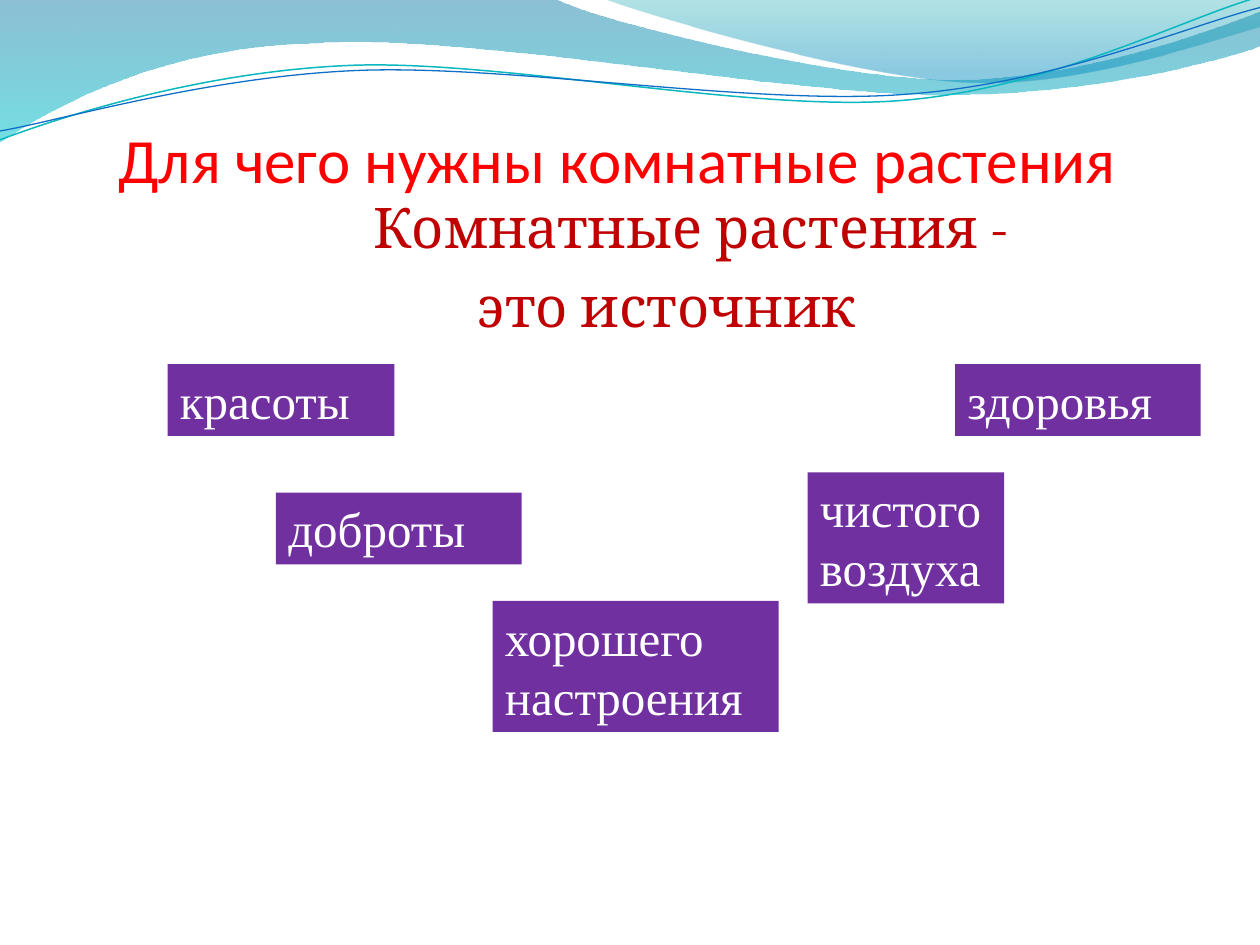
from lxml import etree
from pptx import Presentation
from pptx import util as u
from pptx.dml.color import RGBColor
from pptx.enum import shapes, text
from pptx.oxml.ns import qn

RED = RGBColor(0xFF, 0x00, 0x00)
DARK_RED = RGBColor(0xC0, 0x00, 0x00)
PURPLE = RGBColor(0x70, 0x30, 0xA0)
WHITE = RGBColor(0xFF, 0xFF, 0xFF)
DEEP_BLUE = RGBColor(0x00, 0x74, 0xA1)
CYAN = RGBColor(0x00, 0xC6, 0xCF)
TEAL = RGBColor(0x00, 0xA1, 0xA9)
SKY = RGBColor(0x00, 0x8B, 0xBF)
LINE_TEAL = RGBColor(0x0A, 0xB8, 0xBF)
LINE_BLUE = RGBColor(0x0F, 0x6F, 0xC6)

WIDTH, HEIGHT = 10, 7.5
UNITS_PER_INCH = 100

TITLE = "Для чего нужны комнатные растения"
# text, first-line indent in inches
INTRO = [("Комнатные растения -", 0.08), ("это источник", -0.3)]
# text, left, top, width, number of lines
SOURCES = [
    ("красоты", 1.33, 2.89, 1.8, 1),
    ("хорошего настроения", 3.91, 4.77, 2.27, 2),
    ("доброты", 2.19, 3.91, 1.95, 1),
    ("чистого воздуха", 6.41, 3.75, 1.56, 2),
    ("здоровья", 7.58, 2.89, 1.95, 1),
]

# A step of two numbers is a straight line, one of six is a Bezier curve.
# Gradient stops: position, colour, opacity in percent.
BANDS = [
    ([(0, 0), (4.4, -0.01), (4.76, 0.17, 6.64, 0.63, 7.58, 0.63),
      (8.53, 0.63, 9.58, 0.26, 10, 0.09), (10.01, 0.36),
      (9.83, 0.44, 8.7, 0.76, 7.46, 0.75), (6.22, 0.75, 3.82, 0.28, 2.57, 0.34),
      (1.29, 0.36, 0.46, 0.83, -0.01, 1.13)],
     [(0, DEEP_BLUE, 45), (1, CYAN, 55)]),
    ([(4.79, -0.01), (5.09, 0.11, 6.82, 0.62, 7.69, 0.65),
      (8.56, 0.69, 9.61, 0.32, 10, 0.21), (10, 0)],
     [(0, TEAL, 30), (0.8, SKY, 45)]),
]
WAVES = [
    ([(0, 1.11), (0.48, 0.93, 1.58, 0.57, 2.77, 0.52),
      (3.95, 0.47, 5.93, 0.89, 7.13, 0.8), (8.33, 0.71, 9.38, 0.15, 9.98, -0.02)],
     LINE_TEAL, 0.85),
    ([(0, 1.04), (0.47, 0.96, 1.64, 0.61, 2.83, 0.56),
      (4.03, 0.51, 5.97, 0.84, 7.17, 0.75), (8.36, 0.67, 9.41, 0.21, 10, 0.06)],
     LINE_BLUE, 0.75),
]


def add_outline(page, steps, close):
    """Draw all points as a polygon, then join each curve's three points into a Bezier."""
    points = [tuple(round(value * UNITS_PER_INCH) for value in step[i:i + 2])
              for step in steps for i in range(0, len(step), 2)]
    builder = page.shapes.build_freeform(*points[0], scale=u.Inches(1) / UNITS_PER_INCH)
    builder.add_line_segments(points[1:], close=close)
    shape = builder.convert_to_shape()
    shape.shadow.inherit = False

    segments = iter(list(shape.element.spPr.iter(qn("a:lnTo"))))
    for step in steps[1:]:
        segment = next(segments)
        if len(step) == 6:
            curve = etree.Element(qn("a:cubicBezTo"))
            segment.addprevious(curve)
            for part in (segment, next(segments), next(segments)):
                curve.append(part[0])
                part.getparent().remove(part)
    return shape


def add_band(page, steps, stops):
    band = add_outline(page, steps, close=True)
    band.line.fill.background()
    band.fill.gradient()
    band.fill.gradient_angle = 270
    for stop, (position, color, _) in zip(band.fill.gradient_stops, stops):
        stop.position = position
        stop.color.rgb = color
    for node, (_, _, opacity) in zip(band.element.spPr.iter(qn("a:srgbClr")), stops):
        etree.SubElement(node, qn("a:alpha")).set("val", str(opacity * 1000))


def add_wave(page, steps, color, width):
    wave = add_outline(page, steps, close=False)
    wave.fill.background()
    wave.line.color.rgb = color
    wave.line.width = u.Pt(width)


def write(para, content, *, font, size, color, align=text.PP_ALIGN.LEFT):
    para.alignment = align
    span = para.add_run()
    span.text = content
    span.font.name = font
    span.font.size = u.Pt(size)
    span.font.color.rgb = color


def add_text_box(page, left, top, width, height):
    box = page.shapes.add_textbox(*map(u.Inches, (left, top, width, height)))
    box.text_frame.word_wrap = True
    return box.text_frame


def add_title(page):
    frame = add_text_box(page, 0.94, 0.31, 8.66, 1.25)
    frame.vertical_anchor = text.MSO_ANCHOR.BOTTOM
    frame.margin_left = frame.margin_right = frame.margin_bottom = 0
    write(frame.paragraphs[0], TITLE, font="Calibri", size=36, color=RED)


def add_intro(page):
    frame = add_text_box(page, 0.94, 1.48, 8.71, 4.98)
    for i, (line, indent) in enumerate(INTRO):
        para = frame.add_paragraph() if i else frame.paragraphs[0]
        write(para, line, font="Cambria", size=32, color=DARK_RED,
              align=text.PP_ALIGN.CENTER)
        para.space_before = u.Pt(6.4)
        properties = para._p.get_or_add_pPr()
        properties.set("marL", str(u.Inches(0.3)))
        properties.set("indent", str(u.Inches(indent)))


def add_source(page, label, left, top, width, lines):
    height = 0.1 + 0.47 * lines
    box = page.shapes.add_shape(shapes.MSO_SHAPE.RECTANGLE,
                                *map(u.Inches, (left, top, width, height)))
    box.shadow.inherit = False
    box.fill.solid()
    box.fill.fore_color.rgb = PURPLE
    box.line.fill.background()
    frame = box.text_frame
    frame.word_wrap = True
    frame.vertical_anchor = text.MSO_ANCHOR.TOP
    write(frame.paragraphs[0], label, font="Times New Roman", size=28, color=WHITE)


def main():
    deck = Presentation()
    deck.slide_width, deck.slide_height = u.Inches(WIDTH), u.Inches(HEIGHT)
    page = deck.slides.add_slide(deck.slide_layouts[6])
    for band in BANDS:
        add_band(page, *band)
    for wave in WAVES:
        add_wave(page, *wave)
    add_title(page)
    add_intro(page)
    for source in SOURCES:
        add_source(page, *source)
    deck.save("out.pptx")


if __name__ == "__main__":
    main()
